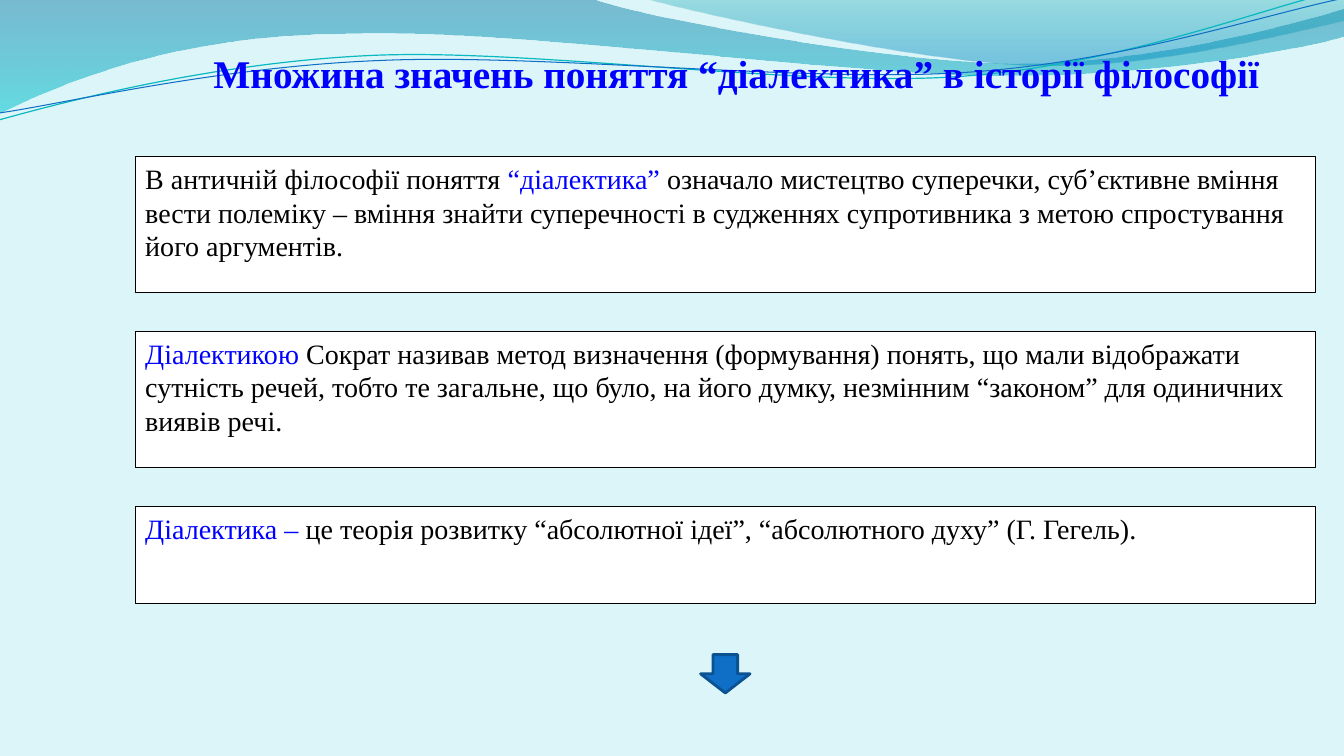
from math import cos, radians, sin
from lxml.etree import SubElement
from pptx import Presentation
from pptx.dml.color import RGBColor
from pptx.enum.shapes import MSO_SHAPE as Preset
from pptx.enum.text import MSO_ANCHOR as Anchor, PP_ALIGN as Align
from pptx.oxml.ns import qn
from pptx.util import Inches, Pt

WIDTH, HEIGHT = Inches(13.33), Inches(7.5)
COLUMN, ROW = WIDTH / 100, HEIGHT / 100
FONT = "Times New Roman"
TILT = 2.7

PALE = RGBColor(0xDB, 0xF5, 0xF9)
WHITE = RGBColor(0xFF, 0xFF, 0xFF)
BLACK = RGBColor(0x00, 0x00, 0x00)
BLUE = RGBColor(0x00, 0x00, 0xFF)
OCEAN = RGBColor(0x0F, 0x6F, 0xC6)
NAVY = RGBColor(0x0B, 0x52, 0x92)
TEAL = RGBColor(0x0A, 0xB8, 0xBF)
DEEP_TEAL = RGBColor(0x00, 0x74, 0xA1)
CYAN = RGBColor(0x00, 0xC6, 0xCF)
SEA = RGBColor(0x00, 0xA1, 0xA9)
AZURE = RGBColor(0x00, 0x8B, 0xBF)

WAVES = [
    ([[(0, -0.01)], [(5.87, -0.01)],
      [(6.34, 0.17), (8.85, 0.63), (10.11, 0.63)],
      [(11.38, 0.63), (12.78, 0.26), (13.33, 0.09)],
      [(13.35, 0.36)],
      [(13.11, 0.44), (11.6, 0.76), (9.94, 0.75)],
      [(8.29, 0.75), (5.09, 0.28), (3.43, 0.34)],
      [(1.72, 0.35), (0.61, 0.83), (-0.01, 1.13)]],
     [(0, DEEP_TEAL, 45), (100, CYAN, 55)]),
    ([[(6.39, -0.01)],
      [(6.79, 0.11), (9.09, 0.62), (10.25, 0.65)],
      [(11.41, 0.69), (12.82, 0.32), (13.33, 0.21)],
      [(13.33, 0)]],
     [(0, SEA, 30), (80, AZURE, 45)]),
]
STRANDS = [
    ([[(-0.01, 1.19)],
      [(0.64, 1.01), (2.11, 0.62), (3.69, 0.55)],
      [(5.27, 0.48), (7.9, 0.87), (9.5, 0.76)],
      [(11.1, 0.65), (12.52, 0.08), (13.31, -0.1)]], (6.65, 0.58), TEAL, 0.85),
    ([[(0, 1.12)],
      [(0.63, 1.03), (2.18, 0.66), (3.78, 0.6)],
      [(5.37, 0.53), (7.96, 0.82), (9.55, 0.72)],
      [(11.15, 0.62), (12.55, 0.14), (13.34, -0.02)]], (6.67, 0.59), OCEAN, 0.75),
]

TITLE = "Множина значень поняття “діалектика” в історії філософії"
MEANINGS = [
    (18, [("В античній філософії поняття", BLACK), (" “діалектика” ", BLUE),
          ("означало мистецтво суперечки, суб’єктивне вміння вести полеміку – "
           "вміння знайти суперечності в судженнях супротивника з метою "
           "спростування його аргументів.", BLACK)]),
    (18, [("Діалектикою ", BLUE),
          ("Сократ називав метод визначення (формування) понять, що мали "
           "відображати сутність речей, тобто те загальне, що було, на його "
           "думку, незмінним “законом” для одиничних виявів речі.", BLACK)]),
    (12.85, [("Діалектика – ", BLUE),
             ("це теорія розвитку “абсолютної ідеї”, “абсолютного духу” "
              "(Г. Гегель).", BLACK)]),
]


def turn(point, center, angle):
    across, down = point[0] - center[0], point[1] - center[1]
    cosine, sine = cos(radians(angle)), sin(radians(angle))
    return (center[0] + across * cosine - down * sine,
            center[1] + across * sine + down * cosine)


def bend(shape, segments):
    lines = list(shape._element.iter(qn("a:lnTo")))
    for segment in segments[1:]:
        group, lines = lines[:len(segment)], lines[len(segment):]
        if len(segment) == 3:
            curve = group[0].makeelement(qn("a:cubicBezTo"))
            group[0].addprevious(curve)
            for line in group:
                curve.append(line[0])
                line.getparent().remove(line)


def draw_outline(shapes, box, segments, close):
    left, top = box
    points = [(left + Inches(x), top + Inches(y))
              for segment in segments for x, y in segment]
    builder = shapes.build_freeform(*points[0])
    builder.add_line_segments(points[1:], close=close)
    shape = builder.convert_to_shape()
    bend(shape, segments)
    shape.shadow.inherit = False
    return shape


def fill_gradient(shape, stops):
    shape.fill.gradient()
    gradient = shape._element.spPr.find(qn("a:gradFill"))
    for child in list(gradient):
        gradient.remove(child)
    stop_list = SubElement(gradient, qn("a:gsLst"))
    for position, color, opacity in stops:
        stop = SubElement(stop_list, qn("a:gs"), pos=str(position * 1000))
        shade = SubElement(stop, qn("a:srgbClr"), val=str(color))
        SubElement(shade, qn("a:alpha"), val=str(opacity * 1000))
    SubElement(gradient, qn("a:lin"), ang="5400000", scaled="0")


def set_line(shape, color, width):
    shape.line.color.rgb = color
    shape.line.width = Pt(width)


def draw_waves(page, box):
    for segments, stops in WAVES:
        wave = draw_outline(page.shapes, box, segments, True)
        fill_gradient(wave, stops)
        wave.line.fill.background()
    strands = page.shapes.add_group_shape().shapes
    for segments, center, color, width in STRANDS:
        level = [[turn(point, center, TILT) for point in segment] for segment in segments]
        strand = draw_outline(strands, box, level, False)
        strand.rotation = 360 - TILT
        strand.fill.background()
        set_line(strand, color, width)


def add_preset(shapes, preset, box, fill, line, width):
    shape = shapes.add_shape(preset, *map(round, box))
    shape.shadow.inherit = False
    shape.fill.solid()
    shape.fill.fore_color.rgb = fill
    set_line(shape, line, width)
    return shape


def write(shape, spans, size, align, bold=False):
    frame = shape.text_frame
    frame.word_wrap = True
    frame.vertical_anchor = Anchor.TOP
    para = frame.paragraphs[0]
    para.alignment = align
    for text, color in spans:
        span = para.add_run()
        span.text = text
        span.font.color.rgb = color
        for name, value in {"name": FONT, "size": Pt(size), "bold": bold}.items():
            setattr(span.font, name, value)


def draw_title(page, box):
    write(page.shapes.add_textbox(*map(round, box)), [(TITLE, BLUE)], 28, Align.CENTER, True)


def draw_meanings(page, box, gap):
    left, top, width = box
    panels = page.shapes.add_group_shape().shapes
    for rows, spans in MEANINGS:
        height = rows * ROW
        panel = add_preset(panels, Preset.RECTANGLE, (left, top, width, height),
                           WHITE, BLACK, 0.75)
        write(panel, spans, 20, Align.LEFT)
        top += height + gap


def draw_arrow(page, box):
    center, top, width, height = box
    add_preset(page.shapes, Preset.DOWN_ARROW, (center - width / 2, top, width, height),
               OCEAN, NAVY, 2)


def main():
    deck = Presentation()
    deck.slide_width, deck.slide_height = WIDTH, HEIGHT
    page = deck.slides.add_slide(deck.slide_layouts[6])
    page.background.fill.solid()
    page.background.fill.fore_color.rgb = PALE

    left, width = 10.07 * COLUMN, 87.8 * COLUMN
    draw_waves(page, (0, 0))
    draw_title(page, (14.38 * COLUMN, 5.87 * ROW, 80.8 * COLUMN, 11.73 * ROW))
    draw_meanings(page, (left, 20.72 * ROW, width), 5.11 * ROW)
    draw_arrow(page, (left + width / 2, 86.6 * ROW, 3.68 * COLUMN, 5.07 * ROW))
    deck.save("out.pptx")


if __name__ == "__main__":
    main()
